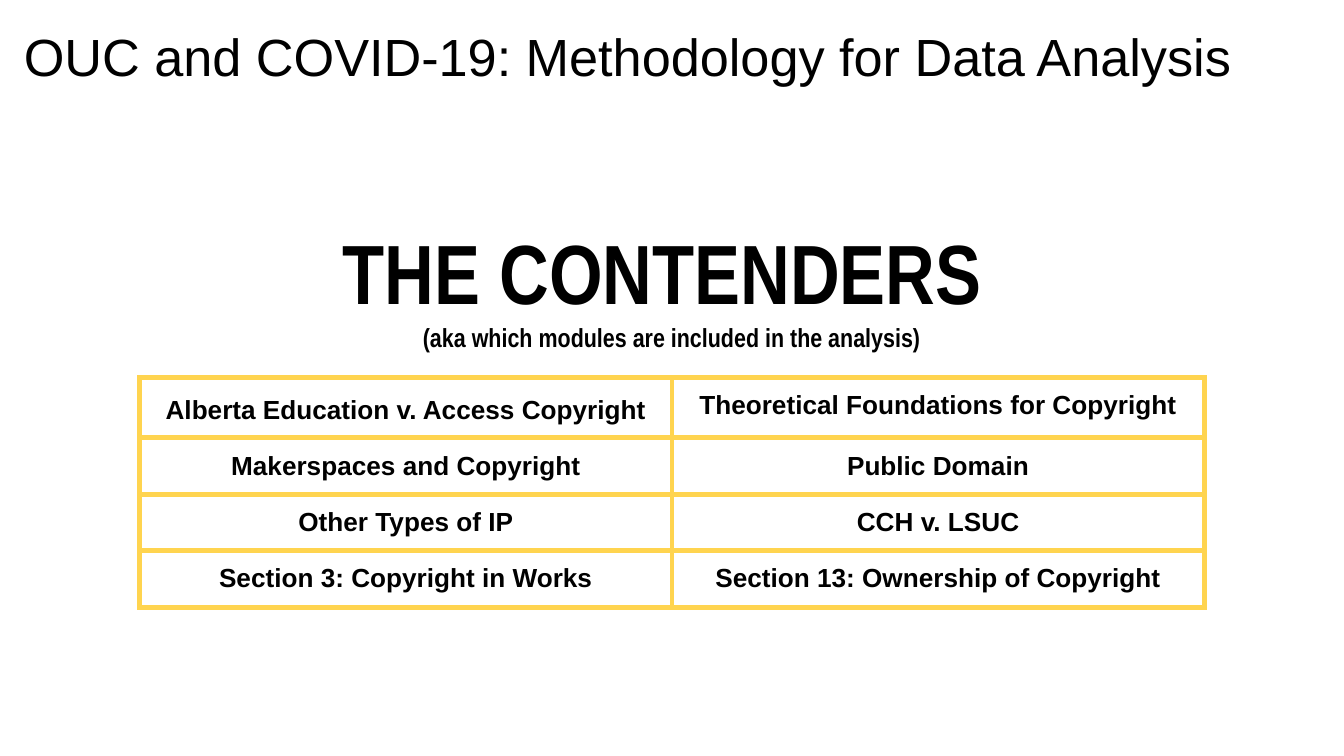
from lxml.etree import SubElement
from pptx import Presentation
from pptx.dml.color import RGBColor
from pptx.enum.text import MSO_AUTO_SIZE as AutoSize, PP_ALIGN as Align
from pptx.oxml.ns import qn
from pptx.util import Inches, Pt

BLACK = RGBColor(0x00, 0x00, 0x00)
WHITE = RGBColor(0xFF, 0xFF, 0xFF)
GOLD = RGBColor(0xFF, 0xD4, 0x4F)

MODULES = [
    ("Alberta Education v. Access Copyright", "Theoretical Foundations for Copyright"),
    ("Makerspaces and Copyright", "Public Domain"),
    ("Other Types of IP", "CCH v. LSUC"),
    ("Section 3: Copyright in Works", "Section 13: Ownership of Copyright"),
]


def write_text(para, text, size=14, font="Arial", bold=True, align=Align.CENTER, spacing=None):
    para.alignment = align
    para.line_spacing = spacing
    span = para.add_run()
    span.text = text
    span.font.size = Pt(size)
    span.font.name = font
    span.font.bold = bold
    span.font.color.rgb = BLACK


def set_insets(holder, bottom=0.1):
    holder.margin_left = holder.margin_right = holder.margin_top = Inches(0.1)
    holder.margin_bottom = Inches(bottom)


def add_text_frame(page, left, top, width, height):
    box = page.shapes.add_textbox(Inches(left), Inches(top), Inches(width), Inches(height))
    frame = box.text_frame
    frame.word_wrap = True
    set_insets(frame)
    return frame


def add_title(page, left, top, width, height):
    frame = add_text_frame(page, left, top, width, height)
    write_text(frame.paragraphs[0], "OUC and COVID-19: Methodology for Data Analysis",
               size=28, bold=False, align=Align.LEFT)


def add_heading(page, left, top, width, height):
    frame = add_text_frame(page, left, top, width, height)
    frame.auto_size = AutoSize.SHAPE_TO_FIT_TEXT
    write_text(frame.paragraphs[0], "THE CONTENDERS ", size=45, font="Arial Narrow")
    write_text(frame.add_paragraph(), "(aka which modules are included in the analysis)",
               font="Arial Narrow")


def set_borders(cell, color, width):
    properties = cell._tc.get_or_add_tcPr()
    for index, side in enumerate(("lnL", "lnR", "lnT", "lnB")):
        line = properties.makeelement(qn(f"a:{side}"), {"w": str(Pt(width))})
        fill = SubElement(line, qn("a:solidFill"))
        SubElement(fill, qn("a:srgbClr"), val=str(color))
        properties.insert(index, line)


def add_modules(page, left, top, width, height):
    table = page.shapes.add_table(len(MODULES), len(MODULES[0]), Inches(left), Inches(top),
                                  Inches(width), Inches(height)).table
    table.first_row = table.horz_banding = False
    for row, names in enumerate(MODULES):
        for column, name in enumerate(names):
            cell = table.cell(row, column)
            set_insets(cell, bottom=0.08)
            cell.fill.solid()
            cell.fill.fore_color.rgb = WHITE
            set_borders(cell, GOLD, 3)
            spacing = 1.15 if row == column == 0 else None
            write_text(cell.text_frame.paragraphs[0], name, spacing=spacing)


def main():
    deck = Presentation()
    deck.slide_width = Inches(10)
    deck.slide_height = deck.slide_width * 9 // 16
    page = deck.slides.add_slide(deck.slide_layouts[6])
    add_title(page, 0.08, 0.08, 9.8, 0.63)
    add_modules(page, 1.04, 2.81, 7.92, 1.68)
    add_heading(page, 0, 1.54, 10, 1.2)
    deck.save("out.pptx")


if __name__ == "__main__":
    main()
